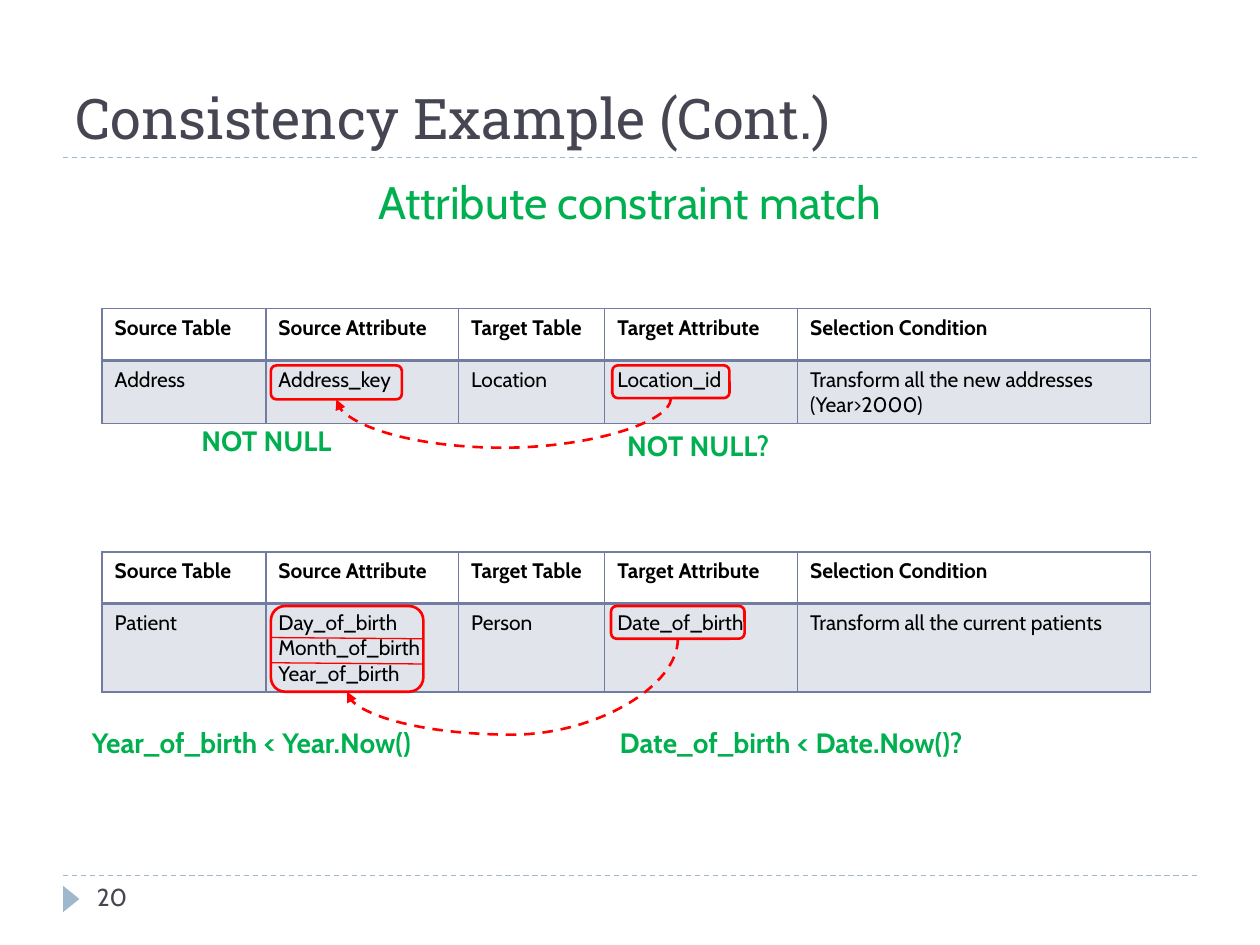
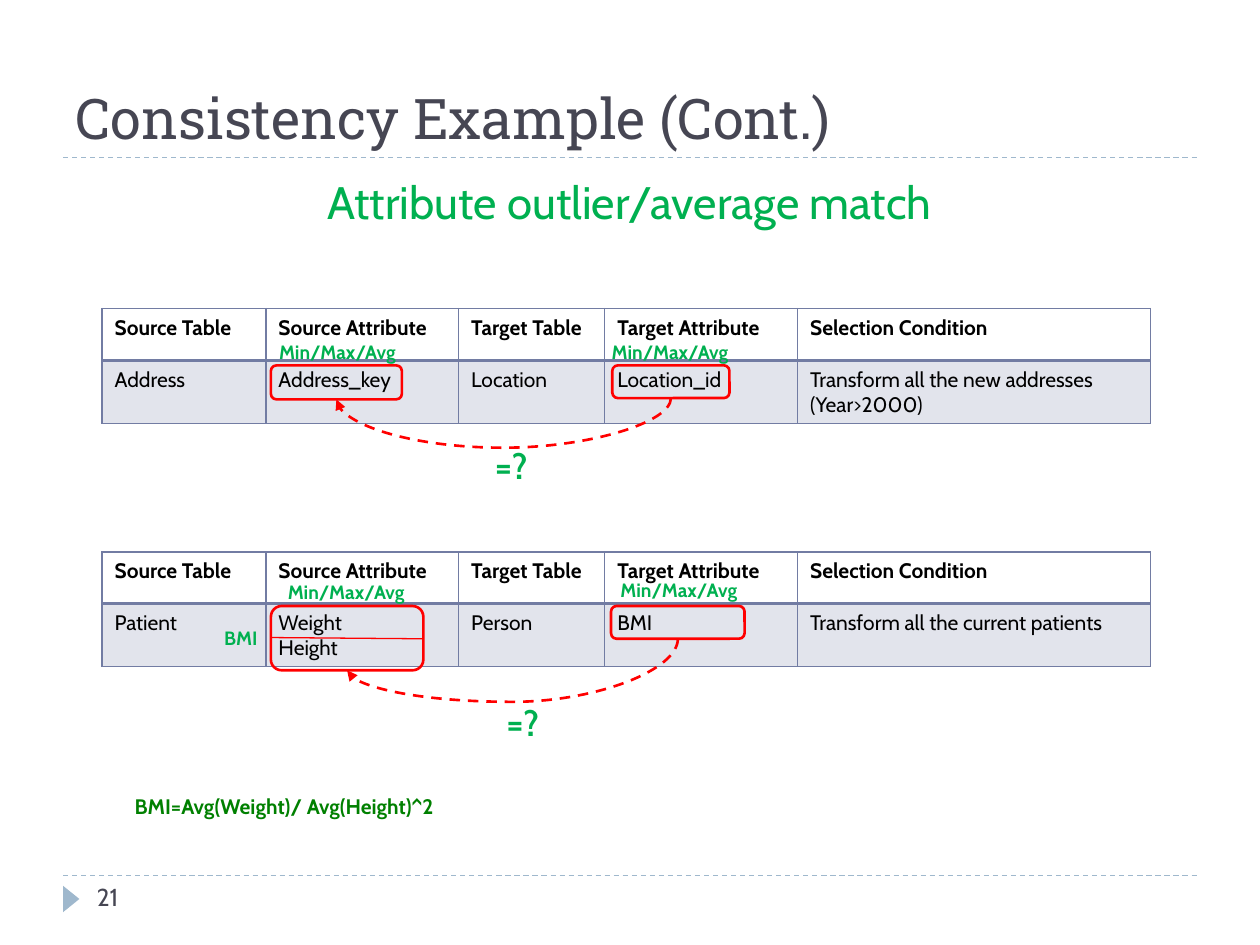
import dataclasses

import lxml.etree
import pptx
import pptx.dml.color
import pptx.enum.dml
import pptx.enum.shapes
import pptx.enum.text
import pptx.oxml.ns
import pptx.util

Inches = pptx.util.Inches
Pt = pptx.util.Pt
qualified = pptx.oxml.ns.qn
Align = pptx.enum.text.PP_ALIGN
ShapeKind = pptx.enum.shapes.MSO_SHAPE
ConnectorKind = pptx.enum.shapes.MSO_CONNECTOR


@dataclasses.dataclass(frozen=True)
class Theme:
    """Colours, fonts and type sizes shared by the slides."""
    title_font: str = "Roboto Slab"
    body_font: str = "Cabin"
    ink: str = "464653"
    table_text: str = "000000"
    band: str = "9FB8CD"
    grid: str = "727CA3"
    mark: str = "FF0000"
    check: str = "00B050"
    formula: str = "008000"
    title_size: int = 32
    topic_size: int = 26
    symbol_size: int = 20
    check_size: int = 16
    number_size: int = 14
    table_size: int = 12
    note_size: int = 11


THEME = Theme()


@dataclasses.dataclass(frozen=True)
class Box:
    """A rectangle in inches."""
    left: float
    top: float
    width: float
    height: float

    def inside(self, outer):
        """Shift this box by the corner of an outer box."""
        return Box(outer.left + self.left, outer.top + self.top, self.width, self.height)

    def lengths(self):
        """Return left, top, width and height as lengths."""
        return [Inches(value) for value in dataclasses.astuple(self)]


@dataclasses.dataclass(frozen=True)
class Label:
    """A bold remark placed relative to a mapping table."""
    text: str
    box: Box
    size: int = THEME.check_size
    color: str = THEME.check
    align: Align = Align.LEFT
    wrap: bool = False


@dataclasses.dataclass(frozen=True)
class Mapping:
    """One mapping row with its framed attributes, arrow and remarks."""
    values: tuple
    box: Box
    source_frame: Box
    target_frame: Box
    arrow_bottom: float
    labels: tuple


HEADERS = ("Source Table", "Source Attribute", "Target Table", "Target Attribute", "Selection Condition")
COLUMN_WIDTHS = (1.3, 1.53, 1.16, 1.53, 2.8)
HEADER_HEIGHT = 0.41
LINE_HEIGHT = 0.2
SLIDE_BOX = Box(0, 0, 10, 7.5)


def rgb(color):
    """Turn a hex string into a colour."""
    return pptx.dml.color.RGBColor.from_string(color)


def style_paragraph(paragraph, size, color, font=THEME.body_font, bold=False, align=Align.LEFT):
    """Set the font and alignment of a paragraph."""
    paragraph.alignment = align
    paragraph.font.name = font
    paragraph.font.size = Pt(size)
    paragraph.font.bold = bold
    paragraph.font.color.rgb = rgb(color)


def add_text(slide, box, text, size, color, wrap=True, **style):
    """Add a text box and return its paragraph."""
    frame = slide.shapes.add_textbox(*box.lengths()).text_frame
    frame.word_wrap = wrap
    frame.text = text
    style_paragraph(frame.paragraphs[0], size, color, **style)
    return frame.paragraphs[0]


def add_line(slide, start, end, color, width, dashed=False, kind=ConnectorKind.STRAIGHT):
    """Add a connector without a shadow."""
    connector = slide.shapes.add_connector(kind, *[Inches(value) for value in (*start, *end)])
    connector.line.color.rgb = rgb(color)
    connector.line.width = Pt(width)
    if dashed:
        connector.line.dash_style = pptx.enum.dml.MSO_LINE.DASH
    lxml.etree.SubElement(connector._element.spPr, qualified("a:effectLst"))
    return connector


def add_curved_arrow(slide, start, end, bottom):
    """Add a dashed arrow that dips to a bottom level between two points."""
    drop, span = end[1] - start[1], start[0] - end[0]
    center_x, center_y = (start[0] + end[0]) / 2, (start[1] + end[1]) / 2
    arrow = add_line(
        slide,
        (center_x - drop / 2, center_y - span / 2),
        (center_x + drop / 2, center_y + span / 2),
        THEME.mark, 1.5, dashed=True, kind=ConnectorKind.CURVE,
    )
    properties = arrow._element.spPr
    properties.find(qualified("a:xfrm")).set("rot", "5400000")
    adjustments = properties.find(qualified("a:prstGeom")).find(qualified("a:avLst"))
    bend = round((bottom - start[1]) / drop * 100000)
    lxml.etree.SubElement(adjustments, qualified("a:gd"), name="adj1", fmla=f"val {bend}")
    lxml.etree.SubElement(properties.find(qualified("a:ln")), qualified("a:tailEnd"), type="triangle")


def add_frame(slide, box):
    """Outline an attribute with a rounded frame."""
    shape = slide.shapes.add_shape(ShapeKind.ROUNDED_RECTANGLE, *box.lengths())
    shape.shadow.inherit = False
    shape.fill.background()
    shape.line.color.rgb = rgb(THEME.mark)
    shape.line.width = Pt(1.5)


def style_cell(cell, is_header):
    """Set the borders, fill and fonts of a table cell."""
    properties = cell._tc.get_or_add_tcPr()
    widths = {"lnL": 1, "lnR": 1, "lnT": 1, "lnB": 2 if is_header else 1}
    if not is_header:
        widths["lnT"] = 2
    for side, width in widths.items():
        line = lxml.etree.SubElement(properties, qualified(f"a:{side}"), w=str(Pt(width)))
        fill = lxml.etree.SubElement(line, qualified("a:solidFill"))
        lxml.etree.SubElement(fill, qualified("a:srgbClr"), val=THEME.grid)
    if is_header:
        cell.fill.background()
    else:
        cell.fill.solid()
        cell.fill.fore_color.rgb = rgb(THEME.grid)
        color = properties.find(qualified("a:solidFill")).find(qualified("a:srgbClr"))
        lxml.etree.SubElement(color, qualified("a:alpha"), val="20000")
    for paragraph in cell.text_frame.paragraphs:
        style_paragraph(paragraph, THEME.table_size, THEME.table_text, bold=is_header)


def add_mapping_table(slide, box, values):
    """Add a header row and one mapping row."""
    table = slide.shapes.add_table(2, len(HEADERS), *box.lengths()).table
    table.first_row = table.horz_banding = False
    for column, width in zip(table.columns, COLUMN_WIDTHS):
        column.width = Inches(width)
    for row, height in zip(table.rows, (HEADER_HEIGHT, box.height - HEADER_HEIGHT)):
        row.height = Inches(height)
    for row_index, texts in enumerate((HEADERS, values)):
        for column_index, text in enumerate(texts):
            cell = table.cell(row_index, column_index)
            cell.text = text
            style_cell(cell, is_header=row_index == 0)


def add_mapping(slide, mapping):
    """Draw a mapping table with its frames, arrow and remarks."""
    box = mapping.box
    add_mapping_table(slide, box, mapping.values)
    source, target = mapping.source_frame.inside(box), mapping.target_frame.inside(box)
    for frame in (source, target):
        add_frame(slide, frame)
    for index in range(mapping.values[1].count("\n")):
        level = source.top + 0.25 + index * LINE_HEIGHT
        add_line(slide, (source.left, level), (source.left + source.width, level + 0.01), THEME.mark, 0.75)
    start, end = [(frame.left + frame.width / 2, frame.top + frame.height) for frame in (target, source)]
    add_curved_arrow(slide, start, end, box.top + mapping.arrow_bottom)
    for label in mapping.labels:
        add_text(slide, label.box.inside(box), label.text, label.size, label.color,
                 wrap=label.wrap, bold=True, align=label.align)


def add_title(slide, box, text):
    """Place and format the title placeholder."""
    title = slide.shapes.title
    title.left, title.top, title.width, title.height = box.lengths()
    frame = title.text_frame
    frame.text = text
    frame.word_wrap = True
    frame.auto_size = pptx.enum.text.MSO_AUTO_SIZE.NONE
    frame.vertical_anchor = pptx.enum.text.MSO_ANCHOR.BOTTOM
    style_paragraph(frame.paragraphs[0], THEME.title_size, THEME.ink, font=THEME.title_font)


def add_footer(slide, box, number):
    """Draw the page marker and number."""
    marker = slide.shapes.add_shape(
        ShapeKind.ISOSCELES_TRIANGLE, *Box(-0.04, 0.12, 0.21, 0.13).inside(box).lengths())
    marker.rotation = 90
    marker.shadow.inherit = False
    marker.fill.solid()
    marker.fill.fore_color.rgb = rgb(THEME.band)
    marker.line.fill.background()
    add_text(slide, Box(0.17, 0, 2.17, 0.4).inside(box), str(number), THEME.number_size, THEME.ink)


def add_example_slide(presentation, box, number, topic, mappings):
    """Add one example slide with its topic and mappings."""
    slide = presentation.slides.add_slide(presentation.slide_layouts[5])
    content = Box(0.5, 1.25, 9, 5.7).inside(box)
    bottom = content.top + content.height
    for level in (content.top, bottom):
        add_line(slide, (content.left, level), (content.left + content.width, level),
                 THEME.band, 0.75, dashed=True)
    add_title(slide, Box(0, -1.08, 9, 1.08).inside(content), "Consistency Example (Cont.)")
    add_footer(slide, Box(content.left, bottom, content.width, 0.4), number)
    topic_box = Box(0, 0.08, 9, 5.4).inside(content)
    paragraph = add_text(slide, topic_box, topic, THEME.topic_size, THEME.check, align=Align.CENTER)
    paragraph.space_before = Pt(6)
    for mapping in mappings:
        add_mapping(slide, mapping)


def check_label(text, left, top, width):
    """Describe a constraint remark."""
    return Label(text, Box(left, top, width, 0.37))


def symbol_label(left, top):
    """Describe an equality question."""
    return Label("=?", Box(left, top, 0.47, 0.44), THEME.symbol_size)


def range_label(left, top):
    """Describe a statistics remark."""
    return Label("Min/Max/Avg", Box(left, top, 1.15, 0.29), THEME.note_size, align=Align.RIGHT)


def address_mapping(*labels):
    """Describe the address mapping with its remarks."""
    return Mapping(
        ("Address", "Address_key", "Location", "Location_id", "Transform all the new addresses (Year>2000)"),
        Box(0.81, 2.45, 8.32, 0.91), Box(1.34, 0.45, 1.04, 0.27), Box(4.05, 0.45, 0.93, 0.26), 1.11, labels)


def patient_mapping(source, target, frame_height, arrow_bottom, *labels):
    """Describe a patient mapping with its remarks."""
    height = 0.51 + LINE_HEIGHT * len(source)
    return Mapping(
        ("Patient", "\n".join(source), "Person", target, "Transform all the current patients"),
        Box(0.81, 4.38, 8.32, height), Box(1.34, 0.43, 1.21, frame_height),
        Box(4.04, 0.43, 1.06, 0.26), arrow_bottom, labels)


def main():
    """Build and save the presentation."""
    presentation = pptx.Presentation()
    presentation.slide_width, presentation.slide_height = SLIDE_BOX.lengths()[2:]
    add_example_slide(presentation, SLIDE_BOX, 20, "Attribute constraint match", (
        address_mapping(check_label("NOT NULL", 0.69, 0.86, 1.45), check_label("NOT NULL?", 4.07, 0.9, 1.53)),
        patient_mapping(
            ("Day_of_birth", "Month_of_birth", "Year_of_birth"), "Date_of_birth", 0.68, 1.45,
            check_label("Year_of_birth < Year.Now()", -0.18, 1.33, 3.01),
            check_label("Date_of_birth < Date.Now()?", 4.01, 1.33, 3.25)),
    ))
    add_example_slide(presentation, SLIDE_BOX, 21, "Attribute outlier/average match", (
        address_mapping(symbol_label(3.02, 1.03), range_label(1.28, 0.2), range_label(3.92, 0.2)),
        patient_mapping(
            ("Weight", "Height"), "BMI", 0.51, 1.19,
            Label("BMI", Box(0.87, 0.54, 0.55, 0.29), THEME.note_size, wrap=True),
            symbol_label(3.11, 1.14), range_label(1.35, 0.18), range_label(3.99, 0.16),
            Label("BMI=Avg(Weight)/ Avg(Height)^2", Box(0.16, 1.87, 3.4, 0.5),
                  THEME.table_size, THEME.formula, wrap=True)),
    ))
    presentation.save("out.pptx")


if __name__ == "__main__":
    main()
